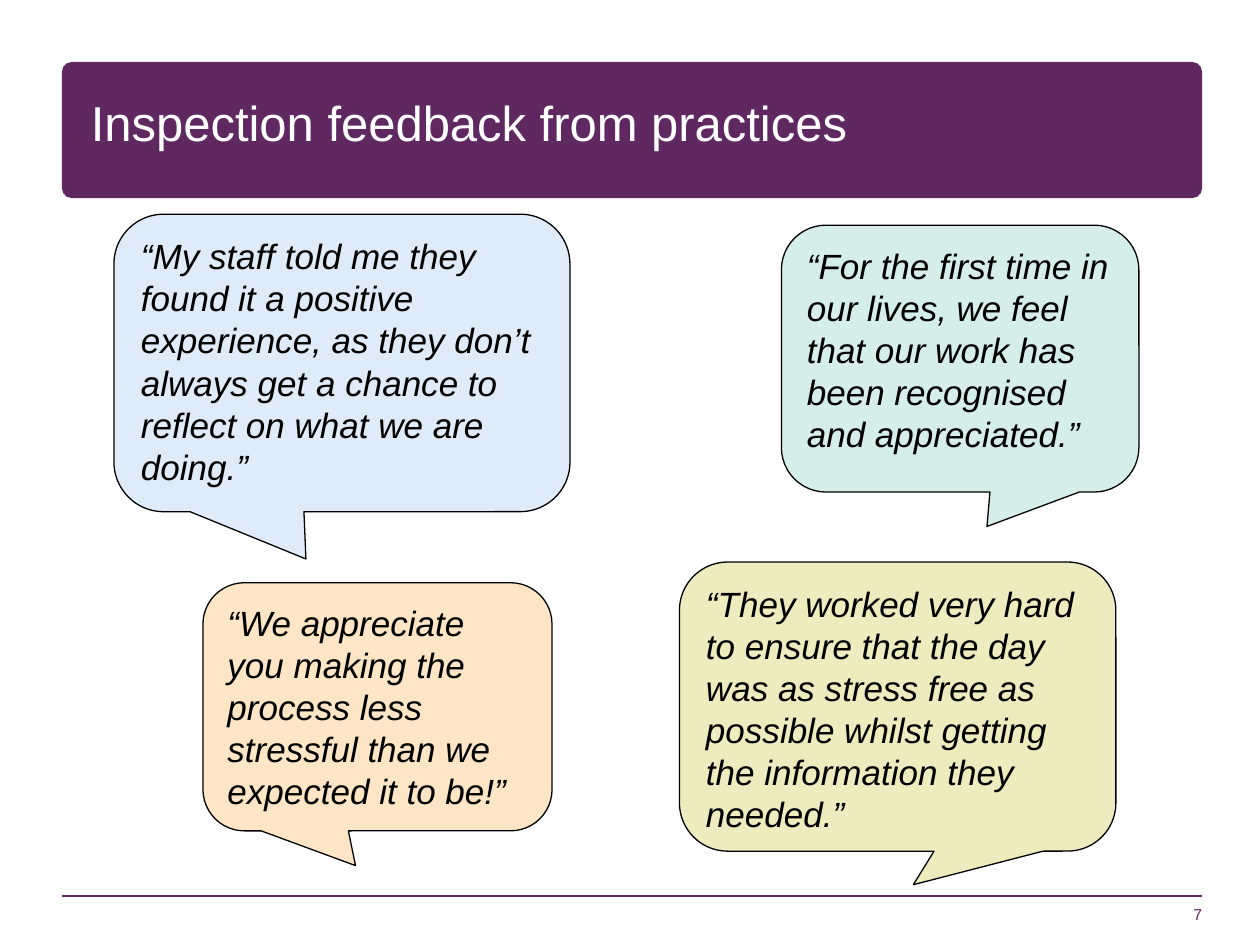
from lxml.etree import SubElement
from pptx import Presentation
from pptx.dml.color import RGBColor
from pptx.enum.shapes import MSO_CONNECTOR, MSO_SHAPE
from pptx.enum.text import MSO_ANCHOR, MSO_AUTO_SIZE, PP_ALIGN
from pptx.oxml.ns import qn
from pptx.util import Pt

PLUM = RGBColor(0x5F, 0x28, 0x61)
WHITE = RGBColor(0xFF, 0xFF, 0xFF)
BLACK = RGBColor(0x00, 0x00, 0x00)
BLUE = RGBColor(0xDF, 0xEB, 0xF9)
MINT = RGBColor(0xD5, 0xEE, 0xEA)
PEACH = RGBColor(0xFD, 0xE5, 0xC5)
LIME = RGBColor(0xEE, 0xEB, 0xBF)

LEFT, WIDTH = 35.4, 651.5

# Box (left, top, width, height), tail tip offset, fill, words
QUOTES = [
    ((65.1, 122.4, 260.6, 170), (-0.079, 0.659), BLUE,
     "“My staff told me they found it a positive experience, as they "
     "don’t always get a chance to reflect on what we are doing.”"),
    ((446.5, 128.7, 204.3, 152.5), (0.075, 0.629), MINT,
     "“For the first time in our lives, we feel that our work has been "
     "recognised and appreciated.”"),
    ((116, 333, 199.5, 141.8), (-0.063, 0.64), PEACH,
     "“We appreciate you making the process less stressful than we "
     "expected it to be!”"),
    ((388.3, 321.2, 249.4, 165.2), (0.036, 0.616), LIME,
     "“They worked very hard to ensure that the day was as stress free as "
     "possible whilst getting the information they needed.”"),
]


def write(frame, text, size, color, anchor, align=PP_ALIGN.LEFT, inset=None):
    """Fill a text frame with one wrapped paragraph and return it."""
    frame.word_wrap = True
    frame.auto_size = MSO_AUTO_SIZE.NONE
    frame.vertical_anchor = anchor
    if inset is not None:
        frame.margin_left = frame.margin_right = Pt(inset)
        frame.margin_top = frame.margin_bottom = Pt(inset)
    frame.text = text
    para = frame.paragraphs[0]
    para.alignment = align
    font = para.runs[0].font
    font.name, font.size = "Arial", Pt(size)
    font.color.rgb = color
    return para


def add_header(slide, left, top, width, height):
    band = slide.shapes.add_shape(
        MSO_SHAPE.ROUNDED_RECTANGLE, Pt(left), Pt(top), Pt(width), Pt(height))
    band.adjustments[0] = 0.072
    band.shadow.inherit = False
    band.fill.solid()
    band.fill.fore_color.rgb = PLUM
    band.line.fill.background()

    title = slide.shapes.title
    band.element.addnext(title.element)
    title.left, title.top = Pt(left + 16.5), Pt(top + 15.8)
    title.width, title.height = Pt(533), Pt(42.5)
    para = write(title.text_frame, "Inspection feedback from practices",
                 28, WHITE, MSO_ANCHOR.MIDDLE, inset=0)
    para.line_spacing = 0.85


def add_footer(slide, left, top, width, number):
    rule = slide.shapes.add_connector(
        MSO_CONNECTOR.STRAIGHT, Pt(left + width), Pt(top), Pt(left), Pt(top))
    rule.line.color.rgb = PLUM
    rule.line.width = Pt(1)
    SubElement(rule.element.spPr, qn("a:effectLst"))

    page = slide.shapes.add_textbox(
        Pt(left + width - 150), Pt(top - 20), Pt(150), Pt(36))
    write(page.text_frame, number, 9, PLUM, MSO_ANCHOR.BOTTOM,
          PP_ALIGN.RIGHT, inset=0)


def add_quote(slide, box, tip, fill, text):
    bubble = slide.shapes.add_shape(
        MSO_SHAPE.ROUNDED_RECTANGULAR_CALLOUT, *map(Pt, box))
    bubble.adjustments[0], bubble.adjustments[1] = tip
    bubble.adjustments[2] = 0.167
    bubble.shadow.inherit = False
    bubble.fill.solid()
    bubble.fill.fore_color.rgb = fill
    bubble.line.color.rgb = BLACK
    bubble.line.width = Pt(0.75)
    para = write(bubble.text_frame, text, 20, BLACK, MSO_ANCHOR.TOP)
    para.runs[0].font.italic = True


def main():
    deck = Presentation()
    deck.slide_width, deck.slide_height = Pt(720), Pt(540)
    slide = deck.slides.add_slide(deck.slide_layouts.get_by_name("Title Only"))
    add_header(slide, LEFT, 35.4, WIDTH, 77.8)
    add_footer(slide, LEFT, 512, WIDTH, "7")
    for quote in QUOTES:
        add_quote(slide, *quote)
    deck.save("out.pptx")


if __name__ == "__main__":
    main()
